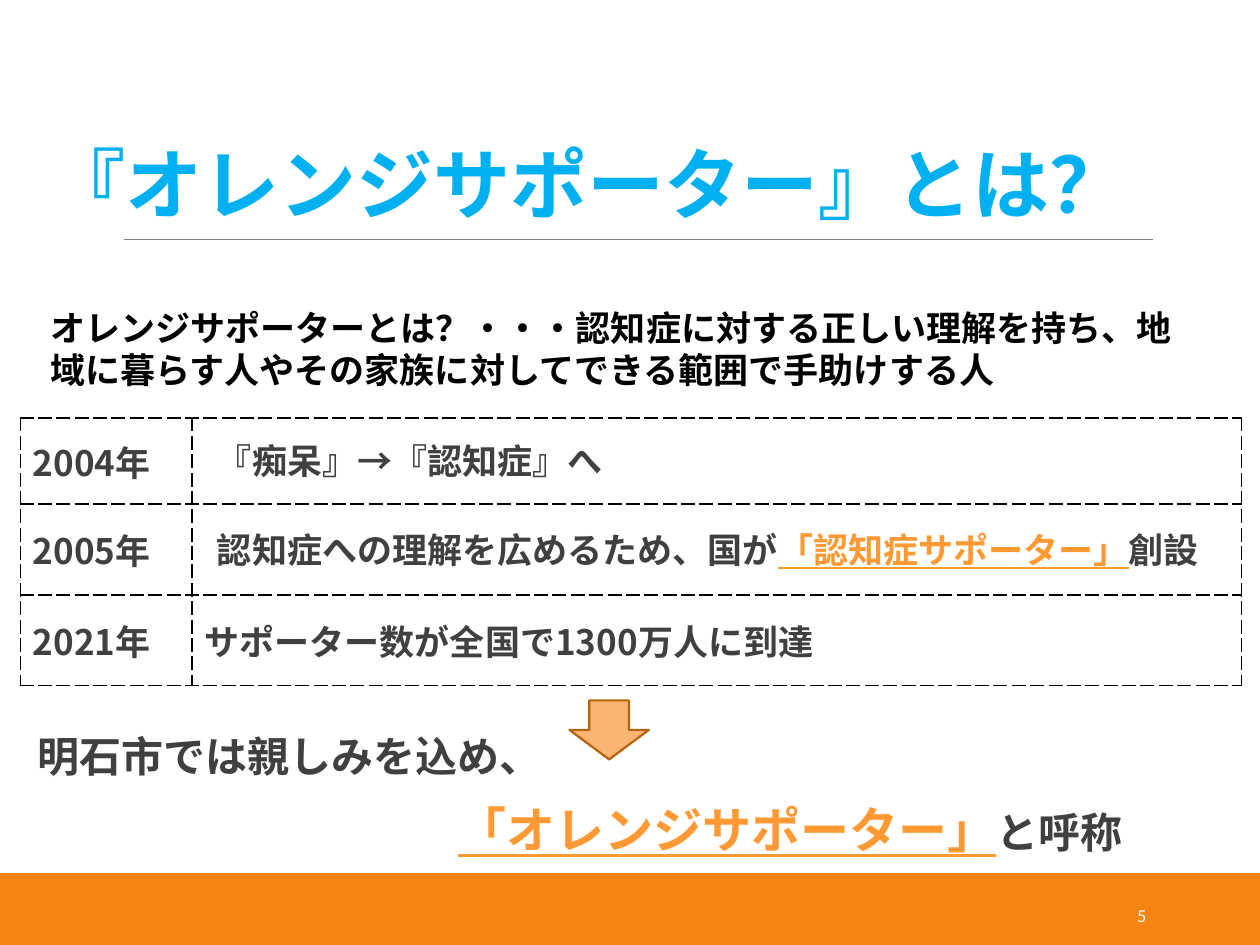
from dataclasses import dataclass
from typing import Optional

from lxml.etree import SubElement as add_child
from pptx import Presentation
from pptx.dml.color import RGBColor as Rgb
from pptx.enum.shapes import MSO_CONNECTOR as Connector
from pptx.enum.shapes import MSO_SHAPE as Preset
from pptx.enum.text import MSO_ANCHOR as Anchor
from pptx.enum.text import PP_ALIGN as Align
from pptx.oxml.ns import qn
from pptx.util import Cm, Pt


@dataclass(frozen=True)
class Theme:
    japanese: str = "Noto Sans CJK JP"
    latin: str = "Calibri"
    band: str = "F58413"
    rule: str = "808080"
    title: str = "00B0F0"
    ink: str = "000000"
    text: str = "404040"
    accent: str = "FF9933"
    arrow: str = "F9B571"
    arrow_edge: str = "B5620E"
    white: str = "FFFFFF"
    title_size: float = 44
    name_size: float = 28
    closing_size: float = 24
    body_size: float = 20
    number_size: float = 10.5


THEME = Theme()


@dataclass(frozen=True)
class Area:
    left: float
    top: float
    width: float
    height: float

    def lengths(self) -> tuple:
        return Cm(self.left), Cm(self.top), Cm(self.width), Cm(self.height)


@dataclass(frozen=True)
class Span:
    text: str
    size: float = THEME.body_size
    color: str = THEME.text
    font: str = THEME.japanese
    bold: bool = True
    underline: bool = False


@dataclass(frozen=True)
class Para:
    spans: tuple
    indent: float = 0
    spaced: bool = False
    align: Align = Align.LEFT


@dataclass(frozen=True)
class Event:
    year: str
    height: float
    story: Para


def write(frame, paras: tuple) -> None:
    frame.text = "\n".join("" for _ in paras)
    for para, source in zip(frame.paragraphs, paras):
        para.alignment = source.align
        if source.indent:
            para._p.get_or_add_pPr().set("marL", str(Cm(source.indent)))
        if source.spaced:
            para.line_spacing = 0.9
            para.space_before, para.space_after = Pt(12), Pt(2)
        for item in source.spans:
            span = para.add_run()
            span.text = item.text
            font = span.font
            font.name, font.size = item.font, Pt(item.size)
            font.bold, font.underline = item.bold, item.underline
            font.color.rgb = Rgb.from_string(item.color)
            east_asian = add_child(span._r.rPr, qn("a:ea"))
            east_asian.set("typeface", item.font)


def add_text(page, area: Area, *paras: Para, anchor: Anchor = Anchor.TOP,
             side: float = 0.25) -> None:
    frame = page.shapes.add_textbox(*area.lengths()).text_frame
    frame.word_wrap = True
    frame.vertical_anchor = anchor
    frame.margin_left = frame.margin_right = Cm(side)
    write(frame, paras)


def add_shape(page, preset: Preset, area: Area, fill: str,
              edge: Optional[str] = None) -> None:
    shape = page.shapes.add_shape(preset, *area.lengths())
    shape.shadow.inherit = False
    shape.fill.solid()
    shape.fill.fore_color.rgb = Rgb.from_string(fill)
    if edge:
        shape.line.color.rgb = Rgb.from_string(edge)
        shape.line.width = Pt(1.25)
    else:
        shape.line.fill.background()


def add_rule(page, left: float, right: float, top: float) -> None:
    rule = page.shapes.add_connector(
        Connector.STRAIGHT, Cm(left), Cm(top), Cm(right), Cm(top))
    rule.line.color.rgb = Rgb.from_string(THEME.rule)
    rule.line.width = Pt(0.5)
    add_child(rule._element.spPr, qn("a:effectLst"))


def add_borders(cell) -> None:
    properties = cell._tc.get_or_add_tcPr()
    for index, side in enumerate(("lnL", "lnR", "lnT", "lnB")):
        line = add_child(properties, qn(f"a:{side}"), w=str(Pt(1)))
        fill = add_child(line, qn("a:solidFill"))
        add_child(fill, qn("a:srgbClr"), val=THEME.ink)
        add_child(line, qn("a:prstDash"), val="sysDash")
        properties.insert(index, line)


def add_history(page, area: Area, widths: tuple, events: tuple) -> None:
    table = page.shapes.add_table(len(events), len(widths), *area.lengths()).table
    table.first_row = table.horz_banding = False
    for column, width in zip(table.columns, widths):
        column.width = Cm(width)
    for row, event in zip(table.rows, events):
        row.height = Cm(event.height)
        for cell, para in zip(row.cells, (Para((Span(event.year),)), event.story)):
            cell.vertical_anchor = Anchor.MIDDLE
            cell.fill.background()
            add_borders(cell)
            write(cell.text_frame, (para,))


EVENTS = (
    Event("2004年", 1.73, Para((Span("『痴呆』→『認知症』へ"),), 0.25, True)),
    Event("2005年", 1.83, Para((
        Span("認知症への理解を広めるため、国が"),
        Span("「認知症サポーター」", color=THEME.accent, underline=True),
        Span("創設")), 0.25, True)),
    Event("2021年", 1.83, Para((Span("サポーター数が全国で1300万人に到達"),))),
)


def main() -> None:
    deck = Presentation()
    deck.slide_width, deck.slide_height = Cm(25.4), Cm(19.05)
    page = deck.slides.add_slide(deck.slide_layouts[6])

    add_shape(page, Preset.RECTANGLE, Area(0, 17.6, 25.4, 1.45), THEME.band)
    add_rule(page, 2.49, 23.24, 4.83)
    add_text(page, Area(0.03, 1.93, 24.89, 3.51),
             Para((Span("『オレンジサポーター』とは？", THEME.title_size,
                        THEME.title),), 0.7),
             anchor=Anchor.MIDDLE)
    add_text(page, Area(0.76, 6.05, 23.42, 1.96),
             Para((Span("オレンジサポーターとは？・・・認知症に対する正しい理解を持ち、"
                        "地域に暮らす人やその家族に対してできる範囲で手助けする人",
                        color=THEME.ink),)))
    add_history(page, Area(0.41, 8.43, 24.62, 5.39), (3.46, 21.16), EVENTS)
    add_shape(page, Preset.DOWN_ARROW, Area(11.48, 14.12, 1.6, 1.19),
              THEME.arrow, THEME.arrow_edge)
    add_text(page, Area(0.76, 14.71, 23.01, 2.62),
             Para((Span("明石市では親しみを込め、", THEME.closing_size),),
                  spaced=True),
             Para((Span("「オレンジサポーター」", THEME.name_size, THEME.accent,
                        underline=True),
                   Span("と呼称", THEME.closing_size)), 8.47, True),
             side=0)
    add_text(page, Area(20.62, 17.93, 2.74, 1.02),
             Para((Span("5", THEME.number_size, THEME.white, THEME.latin,
                        bold=False),), align=Align.RIGHT),
             anchor=Anchor.MIDDLE)
    deck.save("out.pptx")


if __name__ == "__main__":
    main()
